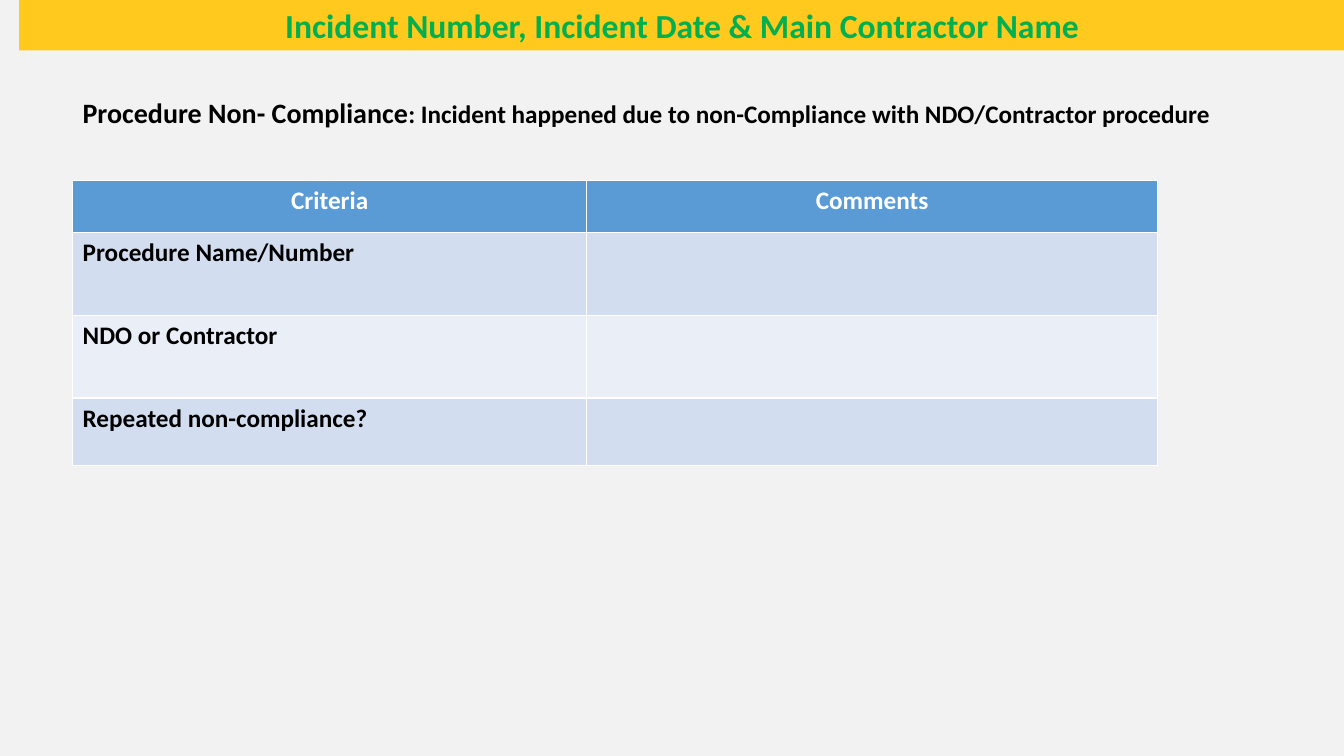
from pptx import Presentation
from pptx.dml.color import RGBColor
from pptx.enum.shapes import MSO_SHAPE
from pptx.enum.text import MSO_ANCHOR, PP_ALIGN
from pptx.util import Inches, Pt

# Content
TITLE = "Incident Number, Incident Date & Main Contractor Name"
LEAD = [
    ("Procedure Non- Compliance", 20),
    (": Incident happened due to non-Compliance with NDO/Contractor procedure", 18),
]
ROWS = [
    ("Criteria", "Comments"),
    ("Procedure Name/Number", ""),
    ("NDO or Contractor", ""),
    ("Repeated non-compliance?", ""),
]
WIDTHS = [5.1, 5.66]
HEIGHTS = [0.52, 0.82, 0.82, 0.67]
LEFT = 0.72
COLORS = {
    "back": "F2F2F2", "bar": "FFC91D", "title": "00B050", "text": "000000",
    "head": "5B9BD5", "white": "FFFFFF", "odd": "D2DEEF", "even": "EAEFF7",
}


def color(name):
    return RGBColor.from_string(COLORS[name])


def paint(fill, name):
    fill.solid()
    fill.fore_color.rgb = color(name)


def style(font, size, name):
    font.name = "Calibri"
    font.bold = True
    font.size = Pt(size)
    font.color.rgb = color(name)


deck = Presentation()
deck.slide_width, deck.slide_height = Inches(13.33), Inches(7.5)
slide = deck.slides.add_slide(deck.slide_layouts[6])
paint(slide.background.fill, "back")

# Lead sentence
box = slide.shapes.add_textbox(Inches(LEFT), Inches(0.94), Inches(11.89), Inches(0.64))
box.text_frame.word_wrap = True
para = box.text_frame.paragraphs[0]
para.line_spacing = 0.9
for text, size in LEAD:
    run = para.add_run()
    run.text = text
    style(run.font, size, "text")

# Title bar
bar = slide.shapes.add_shape(
    MSO_SHAPE.RECTANGLE, Inches(0.19), 0, Inches(13.15), Inches(0.5))
bar.shadow.inherit = False
paint(bar.fill, "bar")
bar.line.fill.background()
bar.text_frame.word_wrap = True
bar.text_frame.vertical_anchor = MSO_ANCHOR.MIDDLE
para = bar.text_frame.paragraphs[0]
para.text = TITLE
para.alignment = PP_ALIGN.CENTER
style(para.font, 24, "title")

# Criteria table
table = slide.shapes.add_table(
    len(ROWS), len(WIDTHS), Inches(LEFT), Inches(1.79),
    Inches(sum(WIDTHS)), Inches(sum(HEIGHTS))).table
for col, width in zip(table.columns, WIDTHS):
    col.width = Inches(width)
for i, (row, height) in enumerate(zip(ROWS, HEIGHTS)):
    table.rows[i].height = Inches(height)
    shade = "head" if i == 0 else "odd" if i % 2 else "even"
    for j, text in enumerate(row):
        cell = table.cell(i, j)
        paint(cell.fill, shade)
        cell.text = text
        para = cell.text_frame.paragraphs[0]
        para.alignment = PP_ALIGN.LEFT if i else PP_ALIGN.CENTER
        style(para.font, 18, "text" if i else "white")

deck.save("out.pptx")
